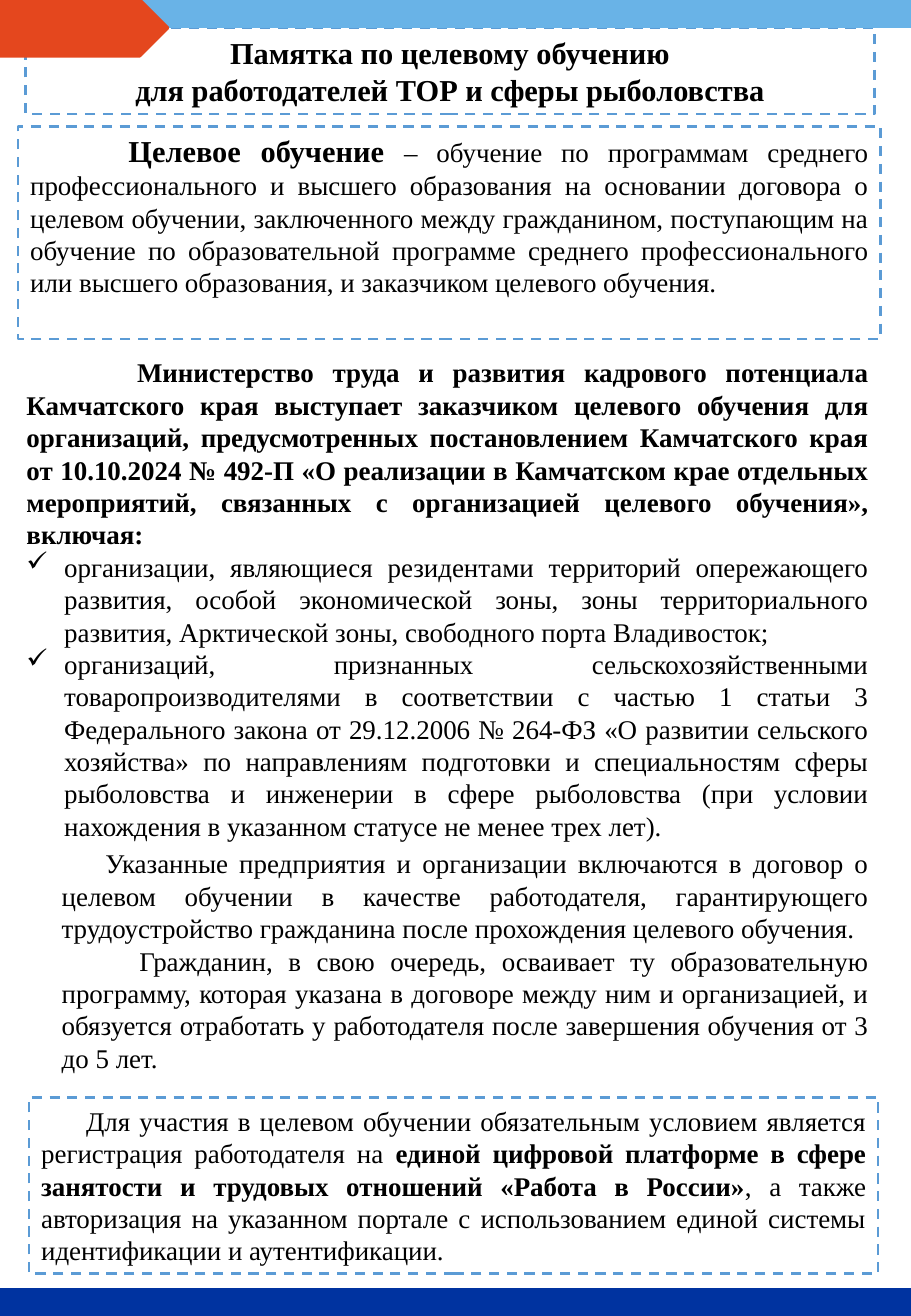
from dataclasses import dataclass

from lxml import etree
from pptx import Presentation
from pptx import util as u
from pptx.dml.color import RGBColor
from pptx.enum import dml, shapes, text
from pptx.oxml import ns

SKY = RGBColor(0x69, 0xB3, 0xE7)
NAVY = RGBColor(0x00, 0x33, 0xA0)
RED = RGBColor(0xE4, 0x47, 0x1E)
EDGE = RGBColor(0x5B, 0x9B, 0xD5)
WHITE = RGBColor(0xFF, 0xFF, 0xFF)
BLACK = RGBColor(0x00, 0x00, 0x00)
FONT = "Times New Roman"
WIDE, HIGH = 7.5, 10.83
HANG = 0.31
FRAME = {
    "word_wrap": True,
    "auto_size": text.MSO_AUTO_SIZE.NONE,
    "margin_left": u.Inches(0.1),
    "margin_right": u.Inches(0.1),
    "margin_top": u.Inches(0.05),
    "margin_bottom": u.Inches(0.05),
}


@dataclass
class Run:
    words: str
    size: int = 16
    bold: bool = False


@dataclass
class Para:
    runs: list[Run]
    first: float = 0
    check: bool = False
    align: text.PP_ALIGN = text.PP_ALIGN.JUSTIFY


@dataclass
class Block:
    area: tuple[float, float, float, float]
    paras: list[Para]
    framed: bool = False
    anchor: text.MSO_ANCHOR = text.MSO_ANCHOR.TOP


@dataclass
class Band:
    area: tuple[float, float, float, float]
    color: RGBColor
    kind: shapes.MSO_SHAPE = shapes.MSO_SHAPE.RECTANGLE


TITLE = Block((0.21, 0.23, 6.99, 0.71), [
    Para([Run(words, 18, True)], align=text.PP_ALIGN.CENTER)
    for words in ("Памятка по целевому обучению", "для работодателей ТОР и сферы рыболовства")
], True, text.MSO_ANCHOR.MIDDLE)

BLOCKS = [
    Block((0.15, 1.04, 7.1, 1.75), [Para([
        Run("Целевое обучение ", 18, True),
        Run("– обучение по программам среднего профессионального и высшего образования на основании "
            "договора о целевом обучении, заключенного между гражданином, поступающим на обучение по "
            "образовательной программе среднего профессионального или высшего образования, и "
            "заказчиком целевого обучения."),
    ], 0.81)], True),
    Block((0.12, 2.88, 7.13, 4.22), [
        Para([Run("Министерство труда и развития кадрового потенциала Камчатского края выступает "
                  "заказчиком целевого обучения для организаций, предусмотренных постановлением "
                  "Камчатского края от 10.10.2024 № 492-П «О реализации в Камчатском крае отдельных "
                  "мероприятий, связанных с организацией целевого обучения», включая:", bold=True)], 0.91),
        Para([Run("организации, являющиеся резидентами территорий опережающего развития, особой "
                  "экономической зоны, зоны территориального развития, Арктической зоны, свободного "
                  "порта Владивосток;")], check=True),
        Para([Run("организаций, признанных сельскохозяйственными товаропроизводителями в соответствии "
                  "с частью 1 статьи 3 Федерального закона от 29.12.2006 № 264-ФЗ «О развитии сельского "
                  "хозяйства» по направлениям подготовки и специальностям сферы рыболовства и инженерии "
                  "в сфере рыболовства (при условии нахождения в указанном статусе не менее трех лет).")],
             check=True),
    ]),
    Block((0.41, 6.92, 6.84, 1.98), [
        Para([Run("Указанные предприятия и организации включаются в договор о целевом обучении в "
                  "качестве работодателя, гарантирующего трудоустройство гражданина после прохождения "
                  "целевого обучения.")], 0.36),
        Para([Run("Гражданин, в свою очередь, осваивает ту образовательную программу, которая указана "
                  "в договоре между ним и организацией, и обязуется отработать у работодателя после "
                  "завершения обучения от 3 до 5 лет.")], 0.64),
    ]),
    Block((0.24, 9.03, 6.99, 1.45), [Para([
        Run("Для участия в целевом обучении обязательным условием является регистрация "
            "работодателя на "),
        Run("единой цифровой платформе в сфере занятости и трудовых отношений «Работа в России»",
            bold=True),
        Run(", а также авторизация на указанном портале с использованием единой системы "
            "идентификации и аутентификации."),
    ], 0.37)], True, text.MSO_ANCHOR.MIDDLE),
]

BANDS = [
    Band((0, -0.01, WIDE, 0.23), SKY),
    Band((0, 10.61, WIDE, 0.23), NAVY),
    Band((0, 0, 1.38, 0.46), RED, shapes.MSO_SHAPE.PENTAGON),
]


def apply(item, values: dict) -> None:
    for name, value in values.items():
        setattr(item, name, value)


def paint(shape, fill: RGBColor, edge: RGBColor, width: float) -> None:
    shape.fill.solid()
    shape.fill.fore_color.rgb = fill
    shape.line.color.rgb = edge
    shape.line.width = u.Pt(width)


def indent(para, item: Para) -> None:
    props = para._p.get_or_add_pPr()
    left, first = (HANG, -HANG) if item.check else (0, item.first)
    props.set("marL", str(u.Inches(left)))
    props.set("indent", str(u.Inches(first)))
    if item.check:
        color = etree.SubElement(props, ns.qn("a:buClr"))
        etree.SubElement(color, ns.qn("a:srgbClr")).set("val", str(BLACK))
        etree.SubElement(props, ns.qn("a:buChar")).set("char", "✓")
    else:
        etree.SubElement(props, ns.qn("a:buNone"))


def write(shape, block: Block) -> None:
    frame = shape.text_frame
    apply(frame, FRAME | {"vertical_anchor": block.anchor})
    for index, item in enumerate(block.paras):
        para = frame.add_paragraph() if index else frame.paragraphs[0]
        indent(para, item)
        para.alignment = item.align
        for part in item.runs:
            run = para.add_run()
            run.text = part.words
            apply(run.font, {"name": FONT, "size": u.Pt(part.size), "bold": part.bold})
            run.font.color.rgb = BLACK
    if block.framed:
        paint(shape, WHITE, EDGE, 1.5)
        shape.line.dash_style = dml.MSO_LINE.DASH


def draw_band(slide, band: Band) -> None:
    shape = slide.shapes.add_shape(band.kind, *map(u.Inches, band.area))
    shape.shadow.inherit = False
    paint(shape, band.color, band.color, 2)


def draw_block(slide, block: Block) -> None:
    area = [u.Inches(side) for side in block.area]
    if block.framed:
        shape = slide.shapes.add_shape(shapes.MSO_SHAPE.RECTANGLE, *area)
        shape.shadow.inherit = False
    else:
        shape = slide.shapes.add_textbox(*area)
    write(shape, block)


def draw_title(slide, block: Block) -> None:
    title = slide.shapes.title
    apply(title, dict(zip(("left", "top", "width", "height"), map(u.Inches, block.area))))
    write(title, block)


def main() -> None:
    deck = Presentation()
    apply(deck, {"slide_width": u.Inches(WIDE), "slide_height": u.Inches(HIGH)})
    slide = deck.slides.add_slide(deck.slide_layouts[5])
    draw_title(slide, TITLE)
    for block in BLOCKS:
        draw_block(slide, block)
    for band in BANDS:
        draw_band(slide, band)
    deck.save("out.pptx")


if __name__ == "__main__":
    main()
